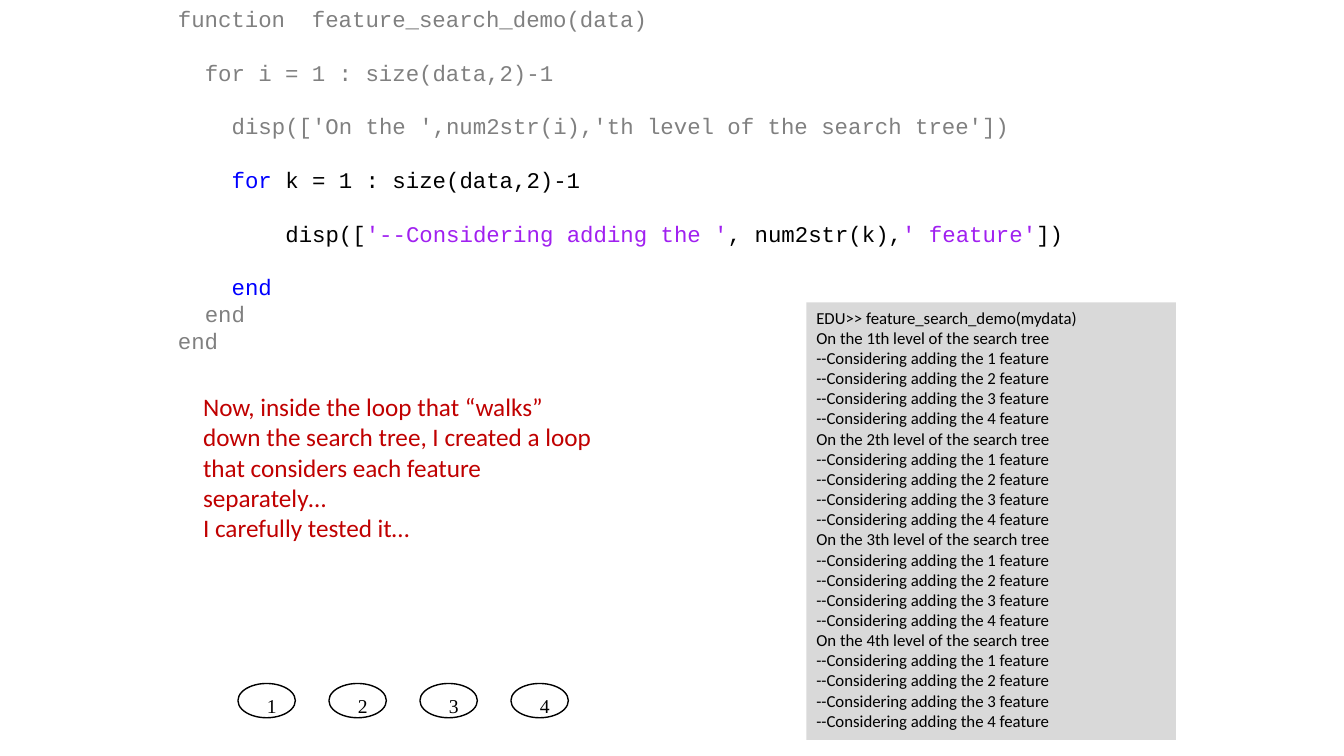
import pptx
import pptx.util
import pptx.dml.color
import pptx.enum.shapes
import pptx.enum.text

Pt = pptx.util.Pt

GREY, BLACK, BLUE, PURPLE = "808080", "000000", "0000FF", "A020F0"
RED, PANEL_GREY = "C00000", "D9D9D9"

INDENT_STEP = 19.2
BLANK_LINE = 19.2

# Each line: indent level, whether a blank line precedes it, coloured pieces
CODE_LINES = [
    (0, False, [("function  feature_search_demo(data)", GREY)]),
    (1, True, [("for i = 1 : size(data,2)-1", GREY)]),
    (2, True, [("disp(['On the ',num2str(i),'th level of the search tree'])", GREY)]),
    (2, True, [("for", BLUE), (" k = 1 : size(data,2)-1", BLACK)]),
    (4, True, [
        ("disp([", BLACK),
        ("'--Considering adding the '", PURPLE),
        (", num2str(k),", BLACK),
        ("' feature'", PURPLE),
        ("])", BLACK),
    ]),
    (2, True, [("end", BLUE)]),
    (1, False, [("end", GREY)]),
    (0, False, [("end", GREY)]),
]
FEATURES = range(1, 5)
COMMENTARY = [
    "Now, inside the loop that “walks” down the search tree, I created a loop "
    "that considers each feature separately…",
    "I carefully tested it…",
]


def color(hex_string):
    return pptx.dml.color.RGBColor.from_string(hex_string)


def format_run(run, font_name, size, hex_string):
    run.font.name = font_name
    run.font.size = Pt(size)
    run.font.color.rgb = color(hex_string)


def write_lines(text_frame, lines, font_name, size, hex_string):
    text_frame.text = "\n".join(lines)
    for paragraph in text_frame.paragraphs:
        paragraph.alignment = pptx.enum.text.PP_ALIGN.LEFT
        for run in paragraph.runs:
            format_run(run, font_name, size, hex_string)


def add_text_box(slide, left, top, width, height, wrap=True):
    text_box = slide.shapes.add_textbox(Pt(left), Pt(top), Pt(width), Pt(height))
    text_box.text_frame.word_wrap = wrap
    return text_box.text_frame


def add_plain_shape(slide, kind, left, top, width, height):
    shape = slide.shapes.add_shape(kind, Pt(left), Pt(top), Pt(width), Pt(height))
    shape.shadow.inherit = False
    return shape


def add_code(slide, left, top, width, height):
    text_frame = add_text_box(slide, left, top, width, height)
    for number, (level, blank_before, pieces) in enumerate(CODE_LINES):
        paragraph = text_frame.add_paragraph() if number else text_frame.paragraphs[0]
        paragraph.line_spacing = Pt(19.2)
        paragraph.space_before = Pt(BLANK_LINE if blank_before else 0)
        properties = paragraph._p.get_or_add_pPr()
        properties.set("marL", str(Pt(level * INDENT_STEP)))
        properties.set("indent", "0")
        for text, hex_string in pieces:
            run = paragraph.add_run()
            run.text = text
            format_run(run, "Courier New", 16, hex_string)


def add_feature_nodes(slide, left, top, pitch):
    """Draw a row of numbered ellipses, each label set slightly low and right."""
    oval = pptx.enum.shapes.MSO_SHAPE.OVAL
    for number, feature in enumerate(FEATURES):
        node_left = left + number * pitch
        node = add_plain_shape(slide, oval, node_left, top, 41, 24.5)
        node.fill.background()
        node.line.color.rgb = color(BLACK)
        node.line.width = Pt(1)
        label = add_text_box(slide, node_left + 13.5, top + 3.6, 21.6, 24.5, wrap=False)
        write_lines(label, [str(feature)], "Times New Roman", 14, BLACK)


def add_console_output(slide, left, top, width, height):
    rectangle = pptx.enum.shapes.MSO_SHAPE.RECTANGLE
    panel = add_plain_shape(slide, rectangle, left, top, width, height)
    panel.fill.solid()
    panel.fill.fore_color.rgb = color(PANEL_GREY)
    panel.line.fill.background()
    lines = ["EDU>> feature_search_demo(mydata)"]
    for level in FEATURES:
        lines.append(f"On the {level}th level of the search tree")
        lines += [f"--Considering adding the {feature} feature" for feature in FEATURES]
    panel.text_frame.word_wrap = True
    panel.text_frame.vertical_anchor = pptx.enum.text.MSO_ANCHOR.TOP
    write_lines(panel.text_frame, lines, "Calibri", 12, BLACK)


def add_commentary(slide, left, top, width, height):
    text_frame = add_text_box(slide, left, top, width, height)
    write_lines(text_frame, COMMENTARY, "Calibri", 18, RED)


def main():
    presentation = pptx.Presentation()
    presentation.slide_width = Pt(960)
    presentation.slide_height = Pt(540)
    slide = presentation.slides.add_slide(presentation.slide_layouts[6])
    add_code(slide, 120, 0, 672, 259.2)
    add_feature_nodes(slide, 170, 488.2, 65)
    add_console_output(slide, 576, 216, 264, 312.5)
    add_commentary(slide, 138, 276, 294, 116.6)
    presentation.save("out.pptx")


if __name__ == "__main__":
    main()
